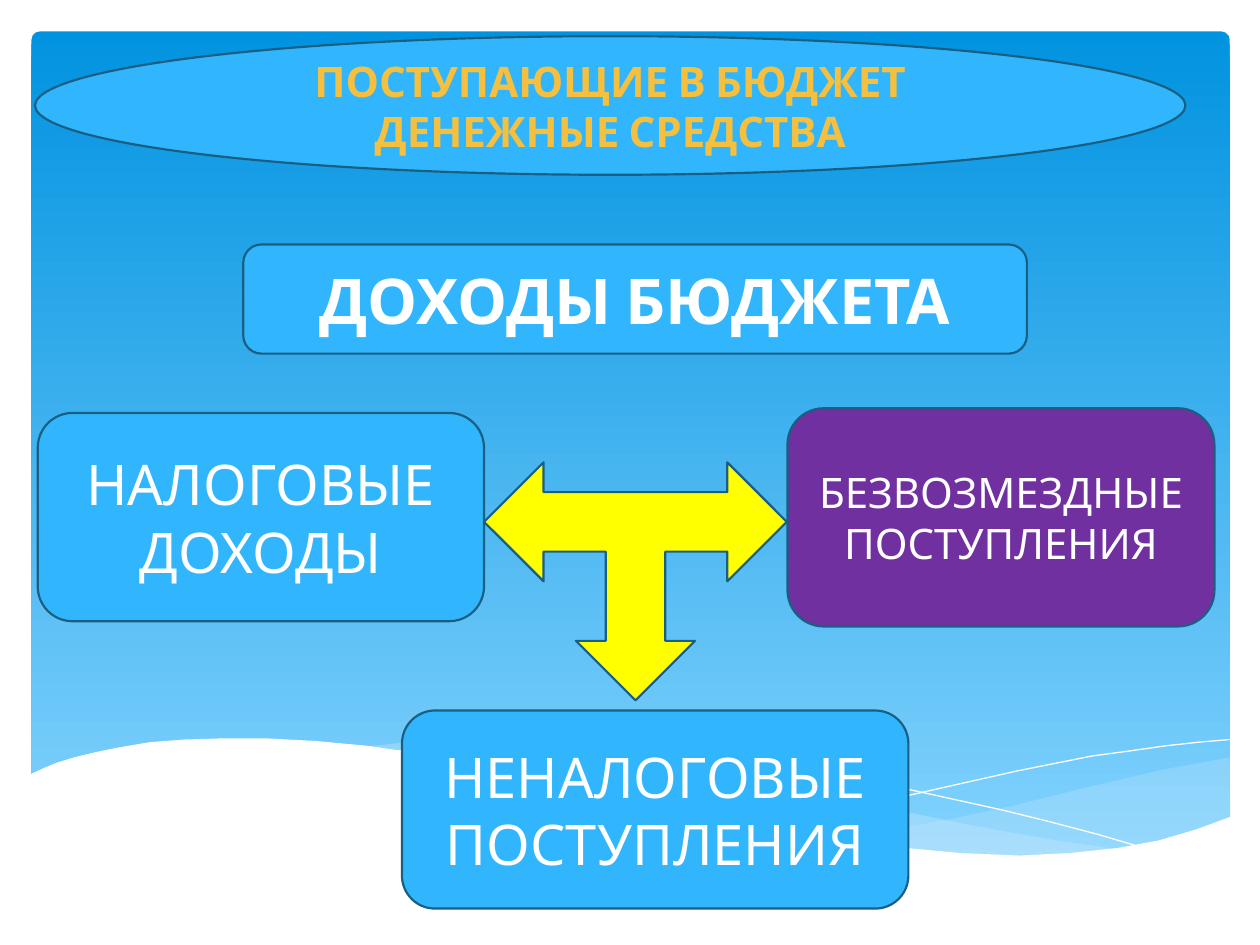
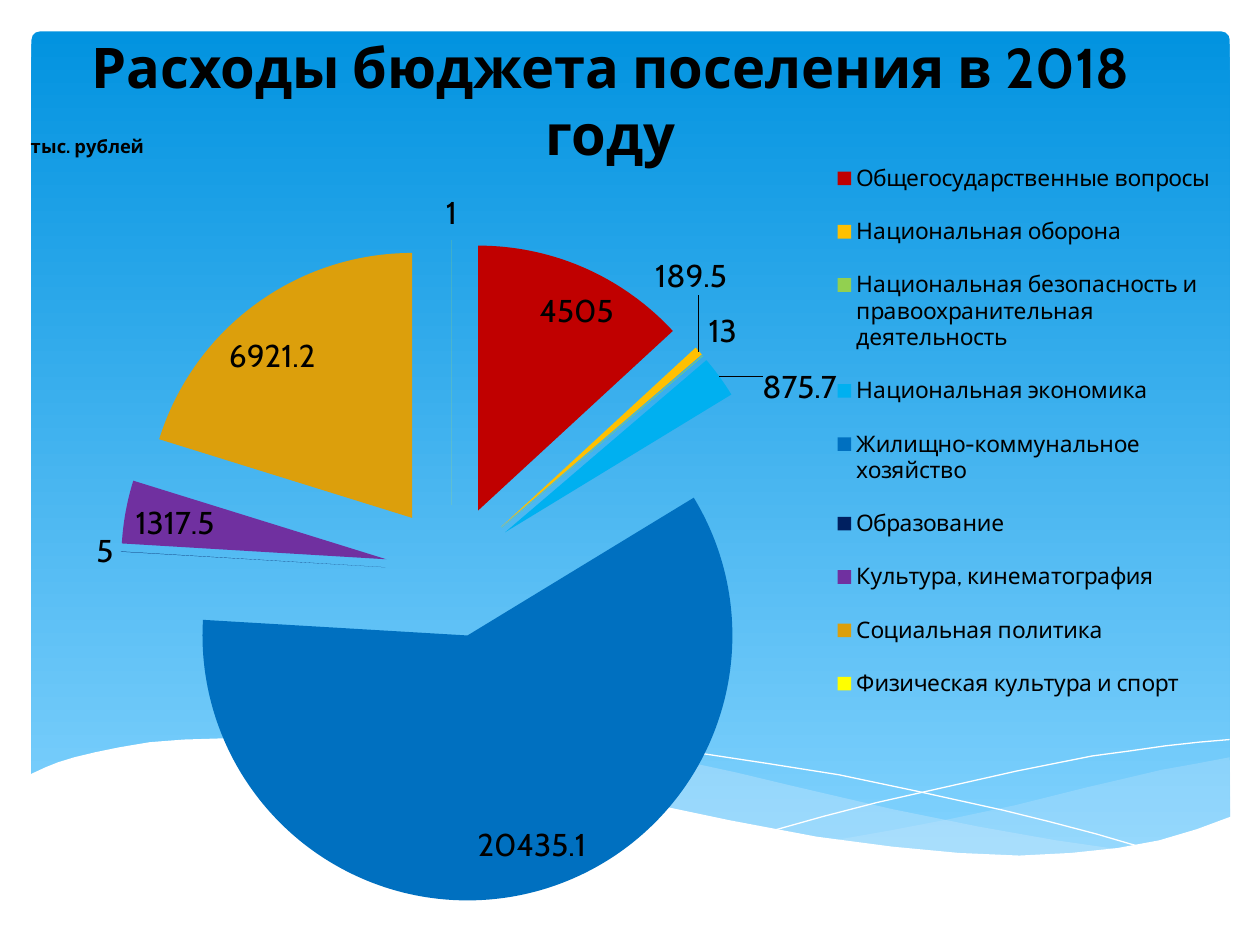
from lxml import etree
from pptx import Presentation
from pptx.chart.data import CategoryChartData
from pptx.dml.color import RGBColor
from pptx.enum.chart import XL_CHART_TYPE, XL_LABEL_POSITION, XL_LEGEND_POSITION
from pptx.enum.shapes import MSO_SHAPE
from pptx.enum.text import MSO_ANCHOR, MSO_AUTO_SIZE, PP_ALIGN
from pptx.oxml.ns import qn
from pptx.util import Pt

ELLIPSE = MSO_SHAPE.OVAL
ROUNDED = MSO_SHAPE.ROUNDED_RECTANGLE
THREE_WAY_ARROW = MSO_SHAPE.LEFT_RIGHT_UP_ARROW
PIE = XL_CHART_TYPE.PIE
BEST_FIT = XL_LABEL_POSITION.BEST_FIT
OUTSIDE_END = XL_LABEL_POSITION.OUTSIDE_END
LEGEND_RIGHT = XL_LEGEND_POSITION.RIGHT
CENTER = PP_ALIGN.CENTER
TOP, MIDDLE = MSO_ANCHOR.TOP, MSO_ANCHOR.MIDDLE
NO_AUTOFIT = MSO_AUTO_SIZE.NONE

FONT = "Cabin"
COLORS = {
    "sky_top": "0293E0",
    "sky_bottom": "83D3FE",
    "wave": "C6E7FC",
    "white": "FFFFFF",
    "black": "000000",
    "box": "31B6FD",
    "outline": "195F84",
    "gold": "F5C040",
    "purple": "7030A0",
    "yellow": "FFFF00",
    "red": "C00000",
    "orange": "FFC000",
    "green": "92D050",
    "light_blue": "00B0F0",
    "blue": "0070C0",
    "navy": "002060",
    "ochre": "DC9F0C",
}
RGB = {name: RGBColor.from_string(value) for name, value in COLORS.items()}

RIGHT_WAVE = [
    (702.7, 432.7), (684, 436.3), (663.8, 439.9), (642.2, 445), (620.6, 450),
    (580.3, 460.1), (542.9, 468), (509, 474.5), (476.6, 480.2), (498.2, 483.1),
    (527.8, 486.7), (554.4, 488.9), (578.9, 489.6), (601.9, 488.9), (622.1, 487.4),
    (640.8, 485.3), (658.1, 481.7), (674.6, 477.4), (694.1, 470.9), (703.4, 467.3),
]
MIDDLE_WAVE = [
    (643.7, 486), (603.4, 480.2), (558.7, 472.3), (509, 462.2), (453.6, 449.3),
    (420.5, 441.4), (390.2, 434.9), (361.4, 430.6), (334.8, 427), (302.4, 424.1),
    (273.6, 422.6), (248.4, 423.4), (226.1, 424.8), (206.6, 427), (232.6, 430.6),
    (261.4, 434.9), (291.6, 441.4), (324, 449.3), (381.6, 462.2), (433.4, 473),
    (479.5, 481), (520.6, 486.7), (557.3, 488.9), (581.8, 489.6), (604.1, 489.6),
    (625, 488.2),
]
FALLING_LINE = [
    (223.2, 429.8), (236.9, 427.7), (254.2, 425.5), (279.4, 424.1), (311.8, 424.1),
    (337.7, 424.8), (367.9, 427.7), (401, 430.6), (438.5, 436.3), (479.5, 442.8),
    (524.2, 452.2), (573.1, 463), (599, 469.4), (626.4, 476.6), (653.8, 484.6),
]
RISING_LINE = [
    (442.1, 474.5), (470.2, 466.6), (501.1, 458.6), (539.3, 450), (581, 440.6),
    (624.2, 432), (645.8, 429.1), (666, 426.2), (685.4, 424.1), (702.7, 422.6),
]
WHITE_GROUND = [
    (703.4, 466.6), (684, 473.8), (662.4, 480.2), (638.6, 484.6), (612, 487.4),
    (582.5, 488.9), (547.9, 487.4), (509.8, 483.8), (466.6, 478.1), (416.9, 468.7),
    (362.2, 457.2), (321.8, 447.8), (281.5, 438.5), (244.8, 431.3), (210.2, 426.2),
    (180, 423.4), (151.9, 421.9), (127.4, 421.9), (105.1, 422.6), (85.7, 424.1),
    (68.4, 427), (54.7, 429.8), (42.5, 432.7), (33.1, 435.6), (25.9, 438.5),
    (16.6, 442.8), (16.6, 526.3), (703.4, 526.3),
]
# points, fill (None draws an open hairline), opacity in percent
WAVES = [
    (RIGHT_WAVE, "wave", 29),
    (MIDDLE_WAVE, "wave", 40),
    (FALLING_LINE, None, 100),
    (RISING_LINE, None, 100),
    (WHITE_GROUND, "white", 100),
]


def add_run(paragraph, text, size, color, bold):
    paragraph.alignment = CENTER
    run = paragraph.add_run()
    run.text = text
    run.font.name = FONT
    run.font.size = Pt(size)
    run.font.bold = bold
    run.font.color.rgb = RGB[color]


def set_layout(element, index, **fractions):
    """Give a chart part a manual layout, as its child number index."""
    for old_layout in element.findall(qn("c:layout")):
        element.remove(old_layout)
    layout = etree.Element(qn("c:layout"))
    manual = etree.SubElement(layout, qn("c:manualLayout"))
    for tag, value in fractions.items():
        etree.SubElement(manual, qn(f"c:{tag}")).set("val", str(value))
    element.insert(index, layout)


presentation = Presentation()
presentation.slide_width = Pt(720)
presentation.slide_height = Pt(540)
title_only, blank = presentation.slide_layouts[5], presentation.slide_layouts[6]
income_slide = presentation.slides.add_slide(blank)
spending_slide = presentation.slides.add_slide(title_only)

# Shared background
for slide in (income_slide, spending_slide):
    sky = slide.shapes.add_shape(ROUNDED, Pt(18), Pt(18), Pt(684.7), Pt(475.2))
    sky.adjustments[0] = 0.01
    sky.shadow.inherit = False
    sky.line.fill.background()
    sky.fill.gradient()
    sky.fill.gradient_angle = 270
    for stop, color in zip(sky.fill.gradient_stops, ("sky_top", "sky_bottom")):
        stop.color.rgb = RGB[color]
    for points, color, opacity in WAVES:
        corners = [(Pt(x), Pt(y)) for x, y in points]
        builder = slide.shapes.build_freeform(*corners[0])
        builder.add_line_segments(corners[1:], close=color is not None)
        wave = builder.convert_to_shape()
        wave.shadow.inherit = False
        if color is None:
            wave.fill.background()
            wave.line.color.rgb = RGB["white"]
            wave.line.width = Pt(0)
            continue
        wave.line.fill.background()
        wave.fill.solid()
        wave.fill.fore_color.rgb = RGB[color]
        if opacity < 100:
            fill_color = wave.element.spPr.find(qn("a:solidFill"))[0]
            etree.SubElement(fill_color, qn("a:alpha")).set("val", str(opacity * 1000))

# Slide 1: sources of income
INCOME_SHAPES = [
    (ELLIPSE, (20, 20.7, 657.4, 79.2), "box",
     "ПОСТУПАЮЩИЕ В БЮДЖЕТ ДЕНЕЖНЫЕ СРЕДСТВА", 24, "gold", True),
    (ROUNDED, (139, 139.7, 447.8, 62.4), "box", "ДОХОДЫ БЮДЖЕТА", 36, "white", True),
    (ROUNDED, (21.6, 236, 255, 119), "box", "НАЛОГОВЫЕ ДОХОДЫ", 32, "white", False),
    (ROUNDED, (450, 233.3, 244, 124.7), "purple",
     "БЕЗВОЗМЕЗДНЫЕ ПОСТУПЛЕНИЯ", 24, "white", False),
    (THREE_WAY_ARROW, (276.6, 264.2, 173, 136), "yellow", "", 0, "white", False),
    (ROUNDED, (229.7, 406, 289.4, 113.2), "box",
     "НЕНАЛОГОВЫЕ ПОСТУПЛЕНИЯ", 32, "white", False),
]
for kind, box, fill, text, size, color, bold in INCOME_SHAPES:
    shape = income_slide.shapes.add_shape(kind, *map(Pt, box))
    shape.shadow.inherit = False
    shape.fill.solid()
    shape.fill.fore_color.rgb = RGB[fill]
    shape.line.color.rgb = RGB["outline"]
    shape.line.width = Pt(1.25)
    if kind == THREE_WAY_ARROW:
        shape.rotation = 180
    if text:
        shape.text_frame.word_wrap = True
        shape.text_frame.vertical_anchor = MIDDLE
        add_run(shape.text_frame.paragraphs[0], text, size, color, bold)

# Slide 2: spending
title = spending_slide.shapes.title
# The placeholder is older than the background, so bring it to the front
title.element.getparent().append(title.element)
title.left, title.top, title.width, title.height = Pt(14.4), Pt(15.1), Pt(669), Pt(46)
title.text_frame.auto_size = NO_AUTOFIT
title.text_frame.word_wrap = True
title.text_frame.vertical_anchor = TOP
add_run(title.text_frame.paragraphs[0], "Расходы бюджета поселения в 2018 году",
        32, "black", True)

SPENDING = [
    ("Общегосударственные вопросы", 4505, "red"),
    ("Национальная оборона", 189.5, "orange"),
    ("Национальная безопасность и правоохранительная деятельность", 13, "green"),
    ("Национальная экономика", 875.7, "light_blue"),
    ("Жилищно-коммунальное хозяйство", 20435.1, "blue"),
    ("Образование", 5, "navy"),
    ("Культура, кинематография", 1317.5, "purple"),
    ("Социальная политика", 6921.2, "ochre"),
    ("Физическая культура и спорт", 1, "yellow"),
]
chart_data = CategoryChartData()
chart_data.categories = [name for name, amount, color in SPENDING]
chart_data.add_series("тыс. рублей", [amount for name, amount, color in SPENDING])
chart = spending_slide.shapes.add_chart(
    PIE, Pt(8.6), Pt(54.7), Pt(702.7), Pt(485.3), chart_data).chart
chart.font.name = FONT
chart.font.size = Pt(18)
chart.font.color.rgb = RGB["black"]

chart.has_title = True
add_run(chart.chart_title.text_frame.paragraphs[0], "тыс. рублей", 10.5, "black", True)
chart.has_legend = True
chart.legend.position = LEGEND_RIGHT
chart.legend.include_in_layout = False
chart.legend.font.name = FONT
chart.legend.font.size = Pt(13)
chart.legend.font.color.rgb = RGB["black"]

chart.plots[0].vary_by_categories = True
series = chart.plots[0].series[0]
for index, (name, amount, color) in enumerate(SPENDING):
    slice_fill = series.points[index].format.fill
    slice_fill.solid()
    slice_fill.fore_color.rgb = RGB[color]
explosion = etree.Element(qn("c:explosion"))
explosion.set("val", "25")
chart.element.xpath(".//c:dPt")[0].addprevious(explosion)

labels = series.data_labels
labels.show_value = True
labels.show_percentage = False
labels.number_format = "General"
labels.number_format_is_linked = False
labels.position = BEST_FIT
labels.font.name = FONT
labels.font.size = Pt(18)
labels.font.color.rgb = RGB["black"]
LABEL_SHIFTS = {1: (-0.04, -0.06), 3: (0.03, 0.04)}
for index in LABEL_SHIFTS:
    series.points[index].data_label.position = OUTSIDE_END
for label, (shift_x, shift_y) in zip(chart.element.xpath(".//c:dLbl"), LABEL_SHIFTS.values()):
    set_layout(label, 1, x=shift_x, y=shift_y)

set_layout(chart.element.xpath(".//c:plotArea")[0], 0, layoutTarget="inner",
           xMode="edge", yMode="edge", x=0.08, y=0.17, w=0.55, h=0.78)
set_layout(chart.element.xpath(".//c:legend")[0], 1,
           xMode="edge", yMode="edge", x=0.66, y=0.05, w=0.32, h=0.69)
set_layout(chart.element.xpath(".//c:title")[0], 1,
           xMode="edge", yMode="edge", x=0.01, y=0.04)

presentation.save("out.pptx")
